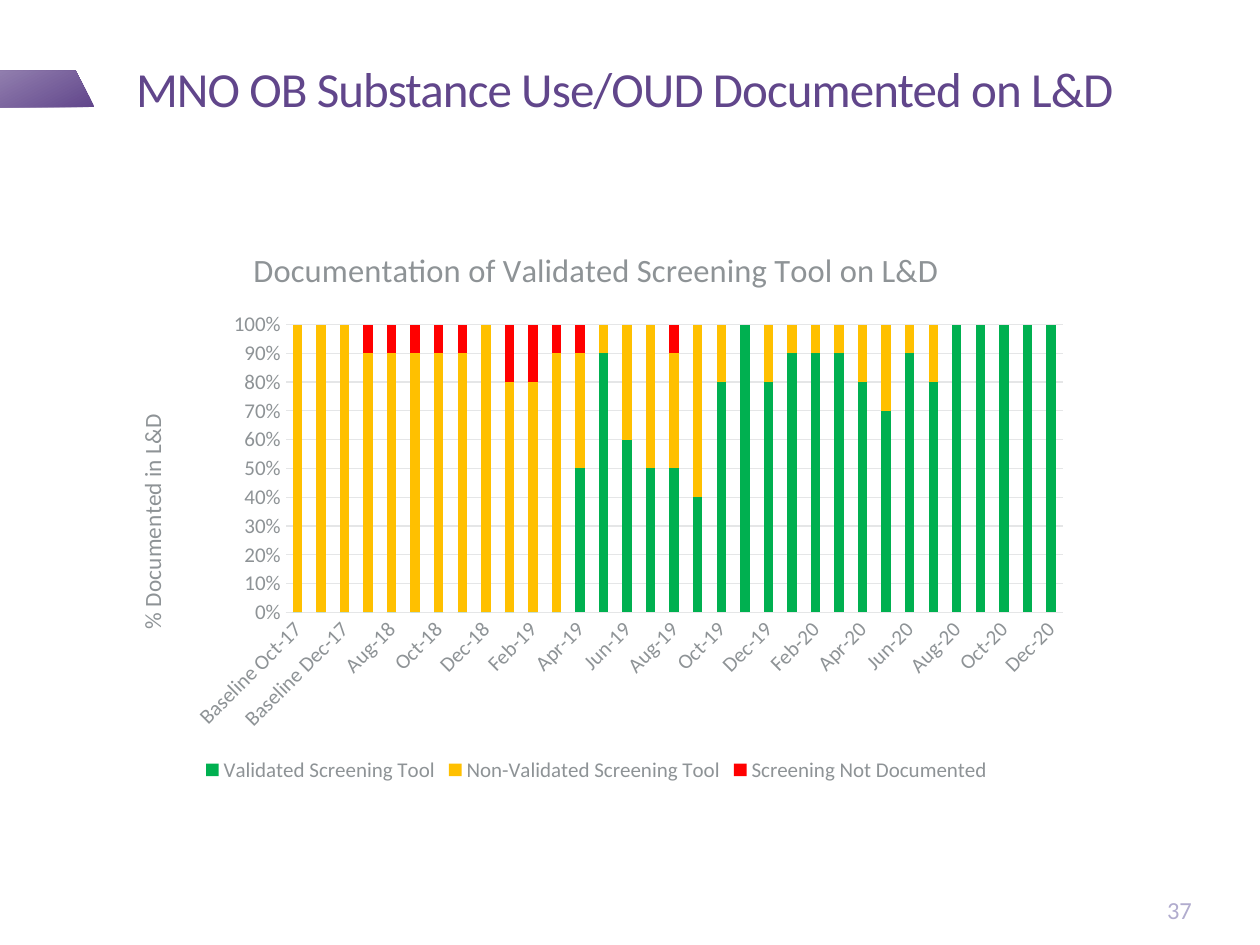
from dataclasses import dataclass

from pptx import Presentation
from pptx.chart.data import CategoryChartData
from pptx.dml.color import RGBColor
from pptx.enum.chart import XL_CHART_TYPE, XL_LEGEND_POSITION, XL_TICK_MARK
from pptx.enum.text import MSO_ANCHOR, PP_ALIGN
from pptx.oxml import parse_xml
from pptx.oxml.ns import nsdecls
from pptx.util import Inches, Pt

FONT = "Calibri"
PURPLE = "61468B"
GREY = "8E9396"
GRID = "E5E6E7"


@dataclass
class Series:
    name: str
    color: str
    values: list[int]


MONTHS = "Jan Feb Mar Apr May Jun Jul Aug Sep Oct Nov Dec".split()
CATEGORIES = (
    [f"Baseline {month}-17" for month in MONTHS[9:]]
    + [f"{month}-18" for month in MONTHS[6:]]
    + [f"{month}-{year}" for year in (19, 20) for month in MONTHS]
)
VALIDATED = [0] * 12 + [50, 90, 60, 50, 50, 40, 80, 100, 80, 90, 90, 90,
                        80, 70, 90, 80] + [100] * 5
MISSING = [0] * 3 + [10] * 5 + [0, 20, 20, 10, 10, 0, 0, 0, 10] + [0] * 16
NON_VALIDATED = [100 - valid - missing for valid, missing in zip(VALIDATED, MISSING)]
SERIES = [
    Series("Validated Screening Tool", "00B050", VALIDATED),
    Series("Non-Validated Screening Tool", "FFC000", NON_VALIDATED),
    Series("Screening Not Documented", "FF0000", MISSING),
]


def rgb(value: str) -> RGBColor:
    return RGBColor.from_string(value)


def style_font(font, size: float, color: str) -> None:
    font.name = FONT
    font.size = Pt(size)
    font.bold = False
    font.color.rgb = rgb(color)


def style_line(line, color: str) -> None:
    line.color.rgb = rgb(color)
    line.width = Pt(0.75)


def set_frame(frame, anchor, right: float = 0, bottom: float = 0) -> None:
    frame.margin_left = frame.margin_top = 0
    frame.margin_right, frame.margin_bottom = Inches(right), Inches(bottom)
    frame.vertical_anchor = anchor


def add_accent(page) -> None:
    """Draw the slanted gradient tab at the left edge."""
    top, bottom = Inches(0.56), Inches(0.85)
    builder = page.shapes.build_freeform(0, top)
    builder.add_line_segments(
        [(Inches(0.6), top), (Inches(0.75), bottom), (0, bottom)], close=True)
    accent = builder.convert_to_shape()
    accent.shadow.inherit = False
    accent.line.fill.background()
    accent.fill.gradient()
    accent.fill.gradient_angle = 118
    for stop, color, position in zip(accent.fill.gradient_stops, (PURPLE, "917EAE"), (0, 1)):
        stop.color.rgb = rgb(color)
        stop.position = position


def add_title(page, text: str) -> None:
    title = page.shapes.title
    title.left, title.top = Inches(1.08), Inches(0.15)
    title.width, title.height = Inches(8.44), Inches(0.83)
    set_frame(title.text_frame, MSO_ANCHOR.BOTTOM, right=0.1, bottom=0.05)
    para = title.text_frame.paragraphs[0]
    span = para.add_run()
    span.text = text
    para.alignment = PP_ALIGN.LEFT
    para.line_spacing = 0.85
    style_font(para.font, 28, PURPLE)
    span._r.get_or_add_rPr().set("spc", "-50")


def add_heading(owner, text: str, size: float) -> None:
    """Give a chart or an axis its title."""
    owner.has_title = True
    heading = owner.chart_title if hasattr(owner, "chart_title") else owner.axis_title
    para = heading.text_frame.paragraphs[0]
    para.add_run().text = text
    style_font(para.font, size, GREY)


def place_plot(chart, x: float, y: float, width: float, height: float) -> None:
    """Fix the inner plot area, in fractions of the chart."""
    area = chart._chartSpace.chart.plotArea
    for old in area.findall("{*}layout"):
        area.remove(old)
    sizes = "".join(f'<c:{tag} val="{value}"/>'
                    for tag, value in zip("xywh", (x, y, width, height)))
    area.insert(0, parse_xml(
        f'<c:layout {nsdecls("c")}><c:manualLayout><c:layoutTarget val="inner"/>'
        f'<c:xMode val="edge"/><c:yMode val="edge"/>{sizes}</c:manualLayout></c:layout>'))


def add_screening_chart(page) -> None:
    data = CategoryChartData()
    data.categories = CATEGORIES
    for series in SERIES:
        data.add_series(series.name, series.values)
    chart = page.shapes.add_chart(
        XL_CHART_TYPE.COLUMN_STACKED_100, Inches(0.88), Inches(1.77),
        Inches(7.71), Inches(4.48), data).chart
    style_font(chart.font, 10, "54585A")
    add_heading(chart, "Documentation of Validated Screening Tool on L&D", 18.6)
    place_plot(chart, 0.18, 0.18, 0.8, 0.51)

    plot = chart.plots[0]
    plot.gap_width, plot.overlap = 150, 100
    plot.vary_by_categories = False
    for drawn, series in zip(plot.series, SERIES):
        drawn.format.fill.solid()
        drawn.format.fill.fore_color.rgb = rgb(series.color)

    months, share = chart.category_axis, chart.value_axis
    for axis in (months, share):
        axis.major_tick_mark = axis.minor_tick_mark = XL_TICK_MARK.NONE
        style_font(axis.tick_labels.font, 12, GREY)
    style_line(months.format.line, GRID)
    months._element.txPr.bodyPr.set("rot", "-2700000")
    add_heading(share, "% Documented in L&D", 13.3)
    share.minimum_scale, share.maximum_scale, share.major_unit = 0, 1, 0.1
    share.tick_labels.number_format = "0%"
    share.tick_labels.number_format_is_linked = False
    share.format.line.fill.background()
    style_line(share.major_gridlines.format.line, GRID)

    chart.has_legend = True
    chart.legend.position = XL_LEGEND_POSITION.BOTTOM
    chart.legend.include_in_layout = False
    style_font(chart.legend.font, 12, GREY)


def add_page_number(page, number: str) -> None:
    box = page.shapes.add_textbox(Inches(9.08), Inches(7.09), Inches(0.38), Inches(0.25))
    set_frame(box.text_frame, MSO_ANCHOR.BOTTOM)
    box.text_frame.word_wrap = False
    para = box.text_frame.paragraphs[0]
    para.text = number
    para.alignment = PP_ALIGN.RIGHT
    style_font(para.font, 14, "B1ACCE")


def main() -> None:
    deck = Presentation()
    deck.slide_width, deck.slide_height = Inches(10), Inches(7.5)
    page = deck.slides.add_slide(deck.slide_layouts[5])
    add_accent(page)
    add_title(page, "MNO OB Substance Use/OUD Documented on L&D")
    add_screening_chart(page)
    add_page_number(page, "37")
    deck.save("out.pptx")


if __name__ == "__main__":
    main()
